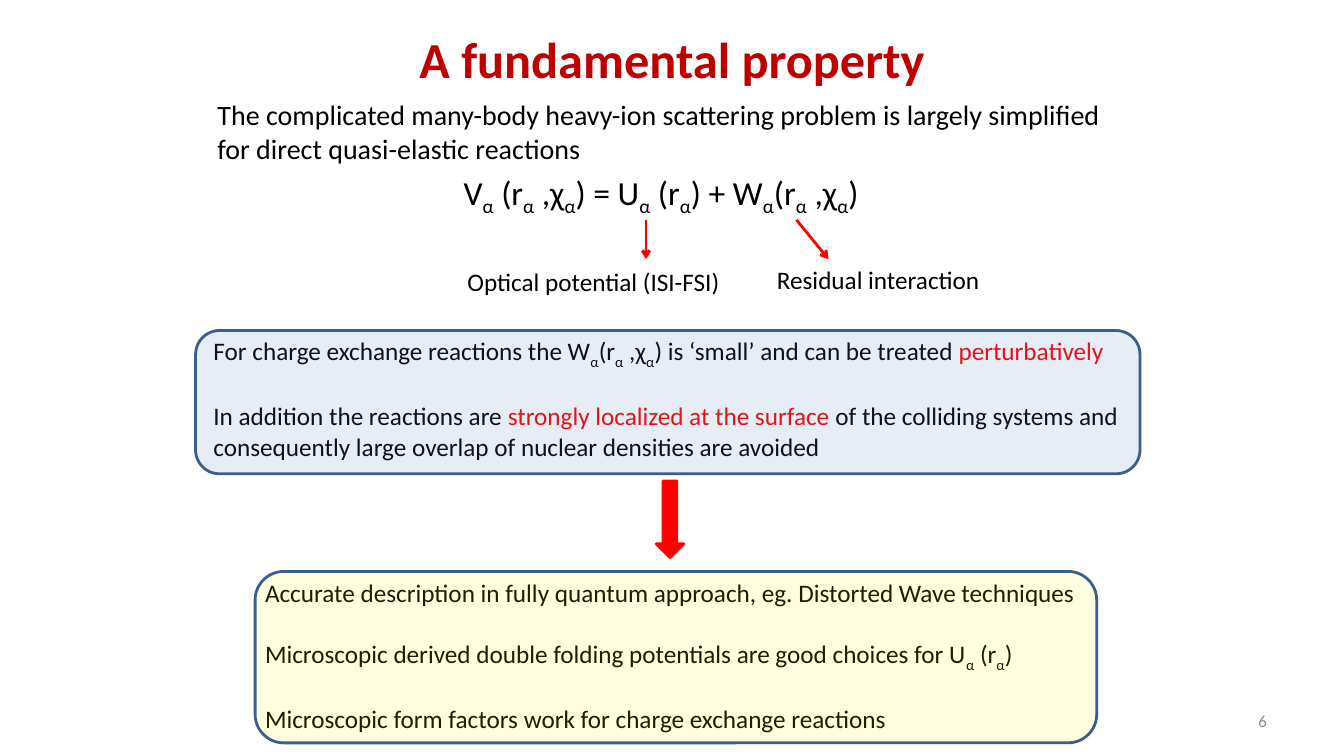
"""Build the slide on a fundamental property of heavy-ion reactions."""
from lxml import etree
from pptx import Presentation
from pptx.dml.color import RGBColor as RGB
from pptx.enum.shapes import MSO_CONNECTOR as LINK, MSO_SHAPE as SHAPE
from pptx.enum.text import MSO_ANCHOR as ANCHOR, PP_ALIGN as ALIGN
from pptx.oxml.ns import qn
from pptx.util import Cm, Pt

HUES = {"title": "C00000", "text": "000000", "red": "FF0000", "page": "8C8C8C",
        "blue": "4F81BD", "yellow": "FFFF00", "edge": "3A5F8C"}
LEFT, MID, RIGHT = ALIGN.LEFT, ALIGN.CENTER, ALIGN.RIGHT
TOP, CORE = ANCHOR.TOP, ANCHOR.MIDDLE

deck = Presentation()
deck.slide_width, deck.slide_height = Cm(33.87), Cm(19.05)
slide = deck.slides.add_slide(deck.slide_layouts[6])
shapes = slide.shapes


def add_text(spot, rows, hue="text", bold=False, anchor=TOP):
    """Write rows of (text, size, align, gap); α is lowered, *...* is red."""
    frame = shapes.add_textbox(*map(Cm, spot)).text_frame
    frame.word_wrap, frame.vertical_anchor = True, anchor
    for i, (text, size, align, gap) in enumerate(rows):
        para = frame.add_paragraph() if i else frame.paragraphs[0]
        para.alignment, para.space_before = align, Pt(gap)
        for j, chunk in enumerate(text.split("*")):
            for bit in filter(None, chunk.replace("α", "|α|").split("|")):
                run = para.add_run()
                run.text = bit
                look = {"name": "Calibri", "size": Pt(size), "bold": bold}
                for key, value in look.items():
                    setattr(run.font, key, value)
                run.font.color.rgb = RGB.from_string(HUES["red" if j % 2 else hue])
                if bit == "α":
                    run.font._element.set("baseline", "-25000")


def add_form(kind, spot, fill, edge, alpha=100):
    """Draw a filled shape with an outline; alpha is the opacity in percent."""
    form = shapes.add_shape(kind, *map(Cm, spot))
    form.shadow.inherit = False
    form.fill.solid()
    form.fill.fore_color.rgb = RGB.from_string(HUES[fill])
    form.line.color.rgb = RGB.from_string(HUES[edge])
    form.line.width = Pt(2)
    if alpha < 100:
        tone = form._element.spPr.find(qn("a:solidFill"))[0]
        etree.SubElement(tone, qn("a:alpha")).set("val", str(alpha * 1000))


add_text((5.51, 0, 22.86, 2.92), [("A fundamental property", 36, MID, 0)],
         "title", True, CORE)
add_text((5.23, 2.34, 22.86, 3.99), [
    ("The complicated many-body heavy-ion scattering problem is largely "
     "simplified for direct quasi-elastic reactions", 20, LEFT, 0),
    ("Vα (rα ,χα) = Uα (rα) + Wα(rα ,χα)", 24, MID, 4.8)])
add_text((24.28, 17.65, 7.9, 1.02), [("6", 12, RIGHT, 0)], "page", anchor=CORE)
add_text((11.53, 6.58, 7.8, 1.02), [("Optical potential (ISI-FSI)", 18, LEFT, 0)])
add_text((19.33, 6.53, 6.6, 1.02), [("Residual interaction", 18, LEFT, 0)])

for start, end in [(16.28, 16.28), (20.07, 20.88)]:
    link = shapes.add_connector(LINK.STRAIGHT, Cm(start), Cm(5.54), Cm(end), Cm(6.53))
    link.line.color.rgb = RGB.from_string(HUES["red"])
    link.line.width = Pt(2)
    etree.SubElement(link.line._get_or_add_ln(), qn("a:tailEnd")).set("type", "arrow")
    etree.SubElement(link._element.spPr, qn("a:effectLst"))

add_text((5.13, 8.33, 24, 4.11), [
    ("For charge exchange reactions the Wα(rα ,χα) is ‘small’ and can be "
     "treated *perturbatively*", 18, LEFT, 0),
    ("In addition the reactions are *strongly localized at the surface *of the "
     "colliding systems and consequently large overlap of nuclear densities "
     "are avoided", 18, LEFT, 22)])
add_form(SHAPE.ROUNDED_RECTANGLE, (4.93, 8.33, 23.8, 3.61), "blue", "edge", 14)

add_text((6.43, 14.43, 21.21, 4.11), [
    ("Accurate description in fully quantum approach, eg. Distorted Wave "
     "techniques", 18, LEFT, 0),
    ("Microscopic derived double folding potentials are good choices for "
     "Uα (rα)", 18, LEFT, 22),
    ("Microscopic form factors work for charge exchange reactions", 18, LEFT, 22)])
add_form(SHAPE.ROUNDED_RECTANGLE, (6.43, 14.4, 21.21, 4.32), "yellow", "edge", 12)
add_form(SHAPE.DOWN_ARROW, (16.54, 12.12, 0.69, 1.93), "red", "red")

deck.save("out.pptx")
